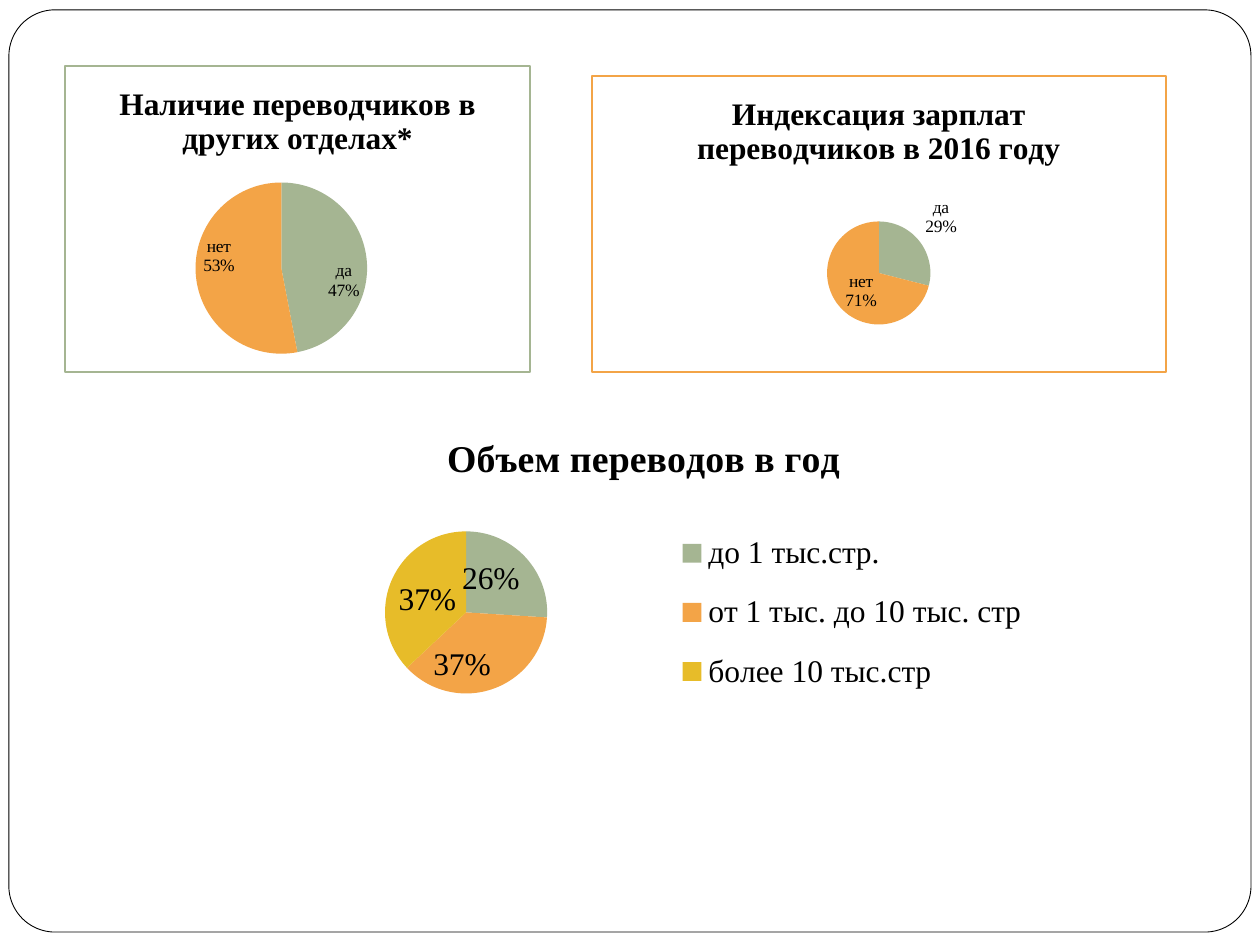
import pptx
import pptx.chart.data
import pptx.dml.color
import pptx.enum.chart
import pptx.enum.shapes
import pptx.oxml
import pptx.oxml.ns
import pptx.util
from pptx.util import Cm

RGB = pptx.dml.color.RGBColor
GREEN = RGB(0xA5, 0xB5, 0x92)
ORANGE = RGB(0xF3, 0xA4, 0x47)
YELLOW = RGB(0xE7, 0xBC, 0x29)
BLACK = RGB(0, 0, 0)
WHITE = RGB(255, 255, 255)
SLICES = (GREEN, ORANGE, YELLOW)
FONT = "Times New Roman"

LABEL = pptx.enum.chart.XL_LABEL_POSITION
qn = pptx.oxml.ns.qn
NS = pptx.oxml.ns.nsdecls("c", "a")


def set_format(target, values):
    for name, value in values.items():
        setattr(target, name, value)


def format_font(font, size, bold=False):
    set_format(font, {"name": FONT, "size": pptx.util.Pt(size), "bold": bold})
    font.color.rgb = BLACK


def set_layout(parent, box, inner=False):
    """Fix a chart part at box: x, y, width, height as shares of the chart."""
    for old in parent.findall(qn("c:layout")):
        parent.remove(old)
    target = '<c:layoutTarget val="inner"/>' if inner else ""
    modes = "".join(f'<c:{k}Mode val="edge"/>' for k in "xy")
    sizes = "".join(f'<c:{k} val="{v}"/>' for k, v in zip("xywh", box))
    layout = pptx.oxml.parse_xml(
        f"<c:layout {NS}><c:manualLayout>{target}{modes}{sizes}"
        "</c:manualLayout></c:layout>")
    legend_pos = parent.find(qn("c:legendPos"))
    if legend_pos is None:
        parent.insert(0, layout)
    else:
        legend_pos.addnext(layout)


def set_chart_area(chart, border):
    """Give the chart square corners and a white area with a border, if any."""
    node = chart.element.find(qn("c:chart"))
    for old in chart.element.findall(qn("c:roundedCorners")):
        chart.element.remove(old)
    node.addprevious(pptx.oxml.parse_xml(f'<c:roundedCorners {NS} val="0"/>'))
    fill = line = "<a:noFill/>"
    if border is not None:
        fill, line = (f'<a:solidFill><a:srgbClr val="{c}"/></a:solidFill>'
                      for c in (WHITE, border))
    node.addnext(pptx.oxml.parse_xml(
        f'<c:spPr {NS}>{fill}<a:ln w="12700">{line}</a:ln></c:spPr>'))


def add_frame(s, box):
    sp = s.shapes.add_shape(pptx.enum.shapes.MSO_SHAPE.ROUNDED_RECTANGLE, *box)
    sp.adjustments[0] = 0.05
    sp.shadow.inherit = False
    sp.fill.solid()
    sp.fill.fore_color.rgb = WHITE
    sp.line.color.rgb = BLACK
    sp.line.width = pptx.util.Pt(0.5)


def add_pie(s, box, title, shares, pie_box, size, title_size,
            position=LABEL.INSIDE_END, border=None, legend_box=None):
    """Add a pie; categories go to the legend if there is one, else to labels."""
    data = pptx.chart.data.CategoryChartData()
    data.categories = list(shares)
    data.add_series(title, list(shares.values()))
    chart = s.shapes.add_chart(
        pptx.enum.chart.XL_CHART_TYPE.PIE, *box, data).chart
    format_font(chart.font, size)

    chart.has_title = True
    tf = chart.chart_title.text_frame
    tf.text = title
    format_font(tf.paragraphs[0].runs[0].font, title_size, bold=True)
    chart.chart_title.include_in_layout = False

    plot = chart.plots[0]
    plot.vary_by_categories = True
    for i, color in enumerate(SLICES[:len(shares)]):
        fill = plot.series[0].points[i].format.fill
        fill.solid()
        fill.fore_color.rgb = color

    plot.has_data_labels = True
    labels = plot.data_labels
    set_format(labels, {
        "show_percentage": True, "show_value": False,
        "show_category_name": legend_box is None,
        "number_format": "0%", "number_format_is_linked": False,
        "position": position})
    format_font(labels.font, size)
    for node in chart.element.iter(qn("c:showBubbleSize")):
        node.addnext(pptx.oxml.parse_xml(f"<c:separator {NS}>\n</c:separator>"))

    chart.has_legend = legend_box is not None
    if chart.has_legend:
        set_format(chart.legend, {
            "position": pptx.enum.chart.XL_LEGEND_POSITION.RIGHT,
            "include_in_layout": False})
        format_font(chart.legend.font, size)
        set_layout(next(chart.element.iter(qn("c:legend"))), legend_box)
    set_layout(next(chart.element.iter(qn("c:plotArea"))), pie_box, inner=True)
    set_chart_area(chart, border)


def main():
    prs = pptx.Presentation()
    prs.slide_width, prs.slide_height = Cm(25.4), Cm(19.05)
    s = prs.slides.add_slide(prs.slide_layouts[6])

    add_frame(s, (Cm(0.18), Cm(0.2), Cm(25.04), Cm(18.59)))
    add_pie(s, (Cm(1.3), Cm(1.32), Cm(9.4), Cm(6.2)),
            "Наличие переводчиков в других отделах*",
            {"да": 47, "нет": 53}, (0.28, 0.38, 0.37, 0.56),
            size=10, title_size=18, border=GREEN)
    add_pie(s, (Cm(11.91), Cm(1.52), Cm(11.61), Cm(6)),
            "Индексация зарплат переводчиков в 2016 году",
            {"да": 29, "нет": 71}, (0.41, 0.49, 0.18, 0.35),
            size=10, title_size=18, position=LABEL.BEST_FIT, border=ORANGE)
    add_pie(s, (Cm(4.24), Cm(8.33), Cm(17.48), Cm(6.81)),
            "Объем переводов в год",
            {"до 1 тыс.стр.": 26, "от 1 тыс. до 10 тыс. стр": 37,
             "более 10 тыс.стр": 37}, (0.2, 0.35, 0.19, 0.48),
            size=18, title_size=21.6, legend_box=(0.54, 0.29, 0.4, 0.6))
    prs.save("out.pptx")


if __name__ == "__main__":
    main()
